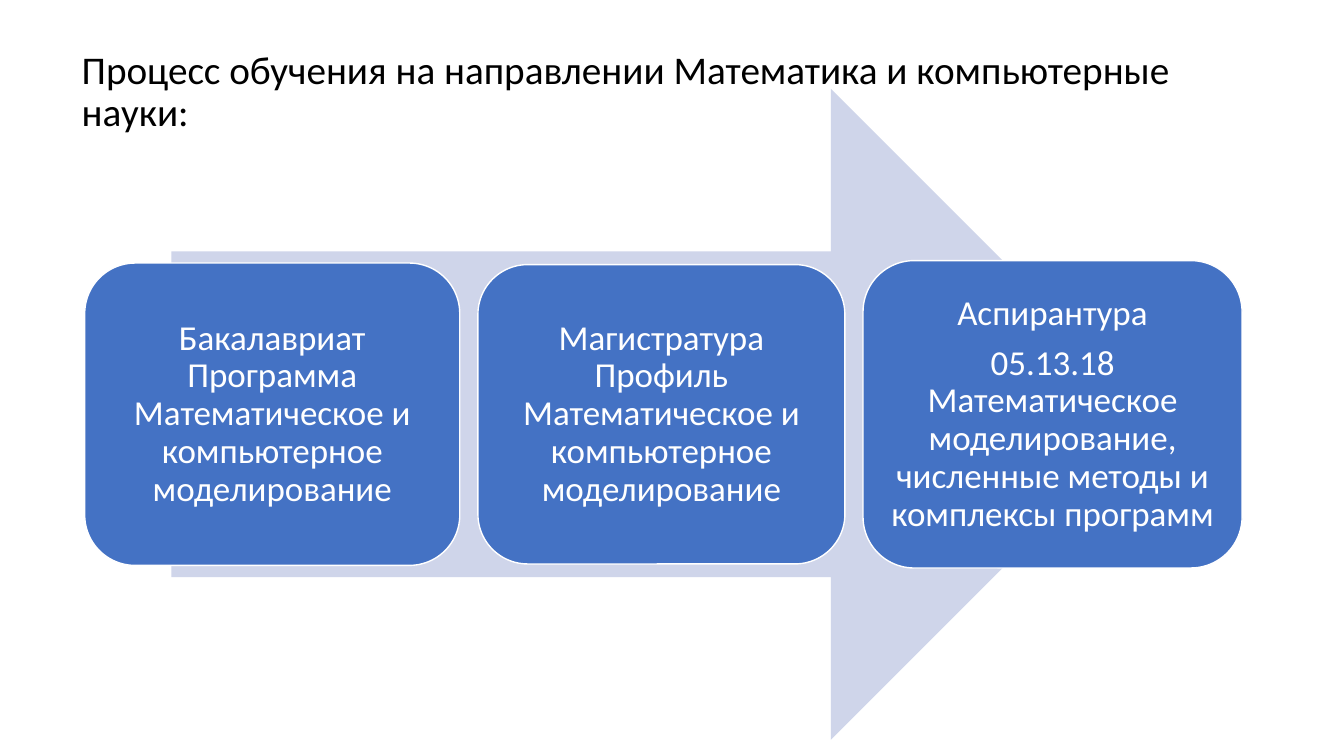
from dataclasses import dataclass

from pptx import Presentation
from pptx.dml.color import RGBColor
from pptx.enum.shapes import MSO_SHAPE as Preset
from pptx.enum.text import MSO_ANCHOR as Anchor, MSO_AUTO_SIZE as AutoSize, PP_ALIGN as Align
from pptx.shapes.autoshape import Shape
from pptx.slide import Slide
from pptx.text.text import TextFrame
from pptx.util import Inches, Pt


@dataclass(frozen=True)
class Theme:
    font: str = "Calibri"
    heading_size: float = 28
    stage_size: float = 25
    line_spacing: float = 0.9
    black: RGBColor = RGBColor(0x00, 0x00, 0x00)
    white: RGBColor = RGBColor(0xFF, 0xFF, 0xFF)
    arrow: RGBColor = RGBColor(0xCF, 0xD5, 0xEA)
    stage: RGBColor = RGBColor(0x44, 0x72, 0xC4)


@dataclass(frozen=True)
class Stage:
    width: float
    height: float
    text: str


THEME = Theme()
HEADING = "Процесс обучения на направлении Математика и компьютерные науки:"
STAGES = (
    Stage(3.72, 3.0, "Бакалавриат Программа Математическое и компьютерное моделирование"),
    Stage(3.64, 2.97, "Магистратура Профиль Математическое и компьютерное моделирование"),
    Stage(3.76, 3.05, "Аспирантура\n05.13.18 Математическое моделирование, "
                      "численные методы и комплексы программ"),
)
STAGES_LEFT = 0.84
STAGE_GAP = 0.18
CENTER_Y = 4.11


def format_text(frame: TextFrame, size: float, color: RGBColor, align: Align,
                before: float = 0, after: float = 0) -> None:
    frame.word_wrap = True
    frame.auto_size = AutoSize.NONE
    for paragraph in frame.paragraphs:
        paragraph.alignment = align
        paragraph.line_spacing = THEME.line_spacing
        paragraph.space_before = Pt(before)
        paragraph.space_after = Pt(after)
        for run in paragraph.runs:
            run.font.name = THEME.font
            run.font.size = Pt(size)
            run.font.color.rgb = color


def add_centered(slide: Slide, preset: Preset, left: float, width: float,
                 height: float, fill: RGBColor) -> Shape:
    """Add a borderless shape whose middle lies on the line of the process."""
    shape = slide.shapes.add_shape(preset, Inches(left), Inches(CENTER_Y - height / 2),
                                   Inches(width), Inches(height))
    shape.shadow.inherit = False
    shape.fill.solid()
    shape.fill.fore_color.rgb = fill
    shape.line.fill.background()
    return shape


def add_heading(slide: Slide) -> None:
    heading = slide.shapes.title
    heading.left, heading.top = Inches(0.71), Inches(0.45)
    heading.width, heading.height = Inches(11.5), Inches(1.05)
    frame = heading.text_frame
    frame.text = HEADING
    frame.vertical_anchor = Anchor.TOP
    format_text(frame, THEME.heading_size, THEME.black, Align.LEFT, before=10)


def add_stage(slide: Slide, stage: Stage, left: float) -> None:
    box = add_centered(slide, Preset.ROUNDED_RECTANGLE, left, stage.width,
                       stage.height, THEME.stage)
    box.line.color.rgb = THEME.white
    box.line.width = Pt(1)
    frame = box.text_frame
    frame.text = stage.text
    frame.vertical_anchor = Anchor.MIDDLE
    frame.margin_left = frame.margin_right = Inches(0.1)
    frame.margin_top = frame.margin_bottom = Inches(0.1)
    format_text(frame, THEME.stage_size, THEME.white, Align.CENTER,
                after=0.35 * THEME.stage_size)


def main() -> None:
    deck = Presentation()
    deck.slide_width, deck.slide_height = Inches(13.33), Inches(7.5)
    slide = deck.slides.add_slide(deck.slide_layouts.get_by_name("Title Only"))
    add_heading(slide)
    add_centered(slide, Preset.RIGHT_ARROW, 1.7, 9.77, 6.46, THEME.arrow)
    left = STAGES_LEFT
    for stage in STAGES:
        add_stage(slide, stage, left)
        left += stage.width + STAGE_GAP
    deck.save("out.pptx")


if __name__ == "__main__":
    main()
